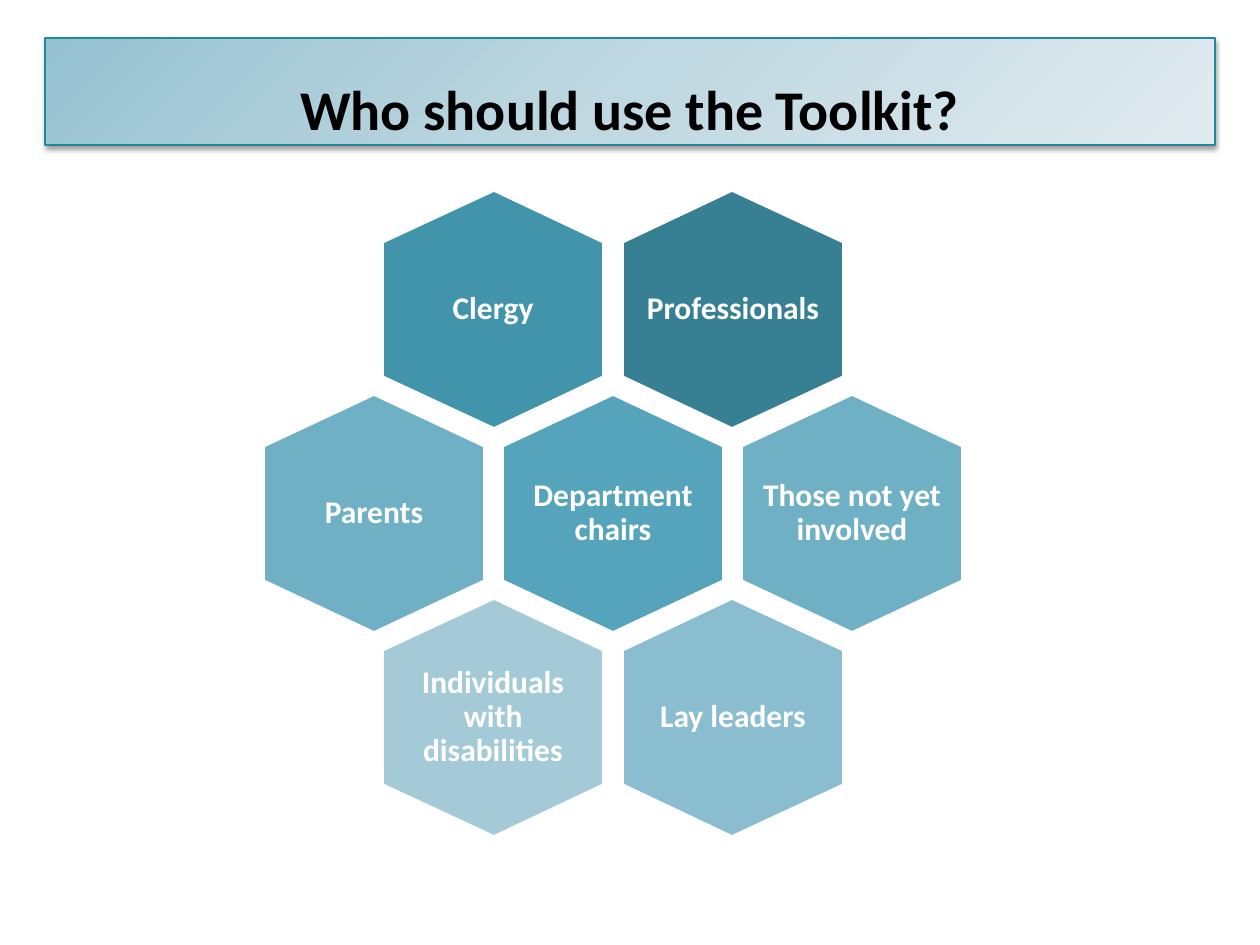
from dataclasses import dataclass

from lxml import etree
from pptx import Presentation
from pptx.dml.color import RGBColor
from pptx.enum.text import MSO_ANCHOR as Anchor, MSO_AUTO_SIZE as AutoSize, PP_ALIGN as Align
from pptx.oxml import parse_xml
from pptx.oxml.ns import nsdecls, qn
from pptx.util import Pt

PX = 914400 / 126  # EMU per px


@dataclass(frozen=True)
class Theme:
    font: str = "Calibri"
    title_size: int = 32
    label_size: int = 18
    white: str = "FFFFFF"
    black: str = "000000"
    title_line: str = "22899D"
    title_stops: tuple = ((0, "96C2D1"), (50, "C0D8E1"), (100, "E0EBEF"))


THEME = Theme()

# Honeycomb rows: (label, fill, horizontal inset, vertical inset)
HEX_ROWS = [
    [("Clergy", "4294AB", 14, 16), ("Professionals", "377F92", 23, 25)],
    [("Parents", "70B0C5", 14, 16), ("Department chairs", "56A4BC", 23, 25),
     ("Those not yet involved", "70B0C5", 14, 16)],
    [("Individuals with disabilities", "A4CAD8", 14, 16), ("Lay leaders", "8ABDCF", 23, 25)],
]


def emu(px):
    return round(px * PX)


def rgb(value):
    return RGBColor.from_string(value)


def set_text(sp, text, *, size, color, inset, spacing, after=0):
    """Write one bold centred paragraph into a shape."""
    tf = sp.text_frame
    tf.word_wrap = True
    tf.auto_size = AutoSize.NONE
    tf.vertical_anchor = Anchor.MIDDLE
    tf.margin_left = tf.margin_right = emu(inset[0])
    tf.margin_top = tf.margin_bottom = emu(inset[1])
    p = tf.paragraphs[0]
    p.alignment = Align.CENTER
    p.line_spacing = spacing
    p.space_before, p.space_after = Pt(0), Pt(after)
    r = p.add_run()
    r.text = text
    r.font.name, r.font.size, r.font.bold = THEME.font, Pt(size), True
    r.font.color.rgb = rgb(color)


def set_gradient(sp, stops, angle):
    """Fill a shape with a linear gradient of (percent, colour) stops."""
    sp.fill.gradient()
    grad = sp._element.spPr.find(qn("a:gradFill"))
    for child in list(grad):
        grad.remove(child)
    gs_lst = etree.SubElement(grad, qn("a:gsLst"))
    for percent, color in stops:
        gs = etree.SubElement(gs_lst, qn("a:gs"), pos=str(percent * 1000))
        etree.SubElement(gs, qn("a:srgbClr"), val=color)
    etree.SubElement(grad, qn("a:lin"), ang=str(angle * 60000), scaled="0")


def add_shadow(sp):
    """Give a shape a soft shadow straight below it."""
    sp._element.spPr.append(parse_xml(
        f'<a:effectLst {nsdecls("a")}>'
        f'<a:outerShdw blurRad="{Pt(3)}" dist="{Pt(1.6)}" dir="5400000" rotWithShape="0">'
        f'<a:srgbClr val="{THEME.black}"><a:alpha val="38000"/></a:srgbClr>'
        '</a:outerShdw></a:effectLst>'))


def title_banner(slide, text, x, y, w, h):
    sp = slide.shapes.title
    sp.left, sp.top, sp.width, sp.height = map(emu, (x, y, w, h))
    set_gradient(sp, THEME.title_stops, 45)
    sp.line.color.rgb = rgb(THEME.title_line)
    sp.line.width = Pt(0.75)
    add_shadow(sp)
    set_text(sp, text, size=THEME.title_size, color=THEME.black, inset=(6, 6), spacing=1.5)


def hexagon(shapes, label, fill, inset, x, y, w, h):
    shoulder = 52  # drop from the tip to the upright sides
    mid, right, bottom = x + w / 2, x + w, y + h
    builder = shapes.build_freeform(mid, y, scale=PX)
    builder.add_line_segments([
        (right, y + shoulder), (right, bottom - shoulder), (mid, bottom),
        (x, bottom - shoulder), (x, y + shoulder)], close=True)
    sp = builder.convert_to_shape()
    sp.shadow.inherit = False
    sp.fill.solid()
    sp.fill.fore_color.rgb = rgb(fill)
    sp.line.color.rgb = rgb(THEME.white)
    sp.line.width = Pt(2)
    set_text(sp, label, size=THEME.label_size, color=THEME.white, inset=inset,
             spacing=0.9, after=6)


def honeycomb(slide, rows, x, y, w, h):
    """Centre each row of hexagons in the box, with rows interlocking."""
    hex_w, hex_h, gap = 222, 239, 17
    pitch_x = hex_w + gap
    pitch_y = (h - hex_h) / (len(rows) - 1)
    group = slide.shapes.add_group_shape()
    for i, row in enumerate(rows):
        row_x = x + (w - len(row) * pitch_x + gap) / 2
        for j, (label, fill, *inset) in enumerate(row):
            hexagon(group.shapes, label, fill, inset,
                    row_x + j * pitch_x, y + i * pitch_y, hex_w, hex_h)


def main():
    prs = Presentation()
    prs.slide_width, prs.slide_height = emu(1260), emu(945)
    slide = prs.slides.add_slide(prs.slide_layouts[5])
    slide.background.fill.solid()
    slide.background.fill.fore_color.rgb = rgb(THEME.white)
    title_banner(slide, "Who should use the Toolkit?", 45, 38, 1170, 107)
    honeycomb(slide, HEX_ROWS, 263, 190, 700, 647)
    prs.save("out.pptx")


if __name__ == "__main__":
    main()
